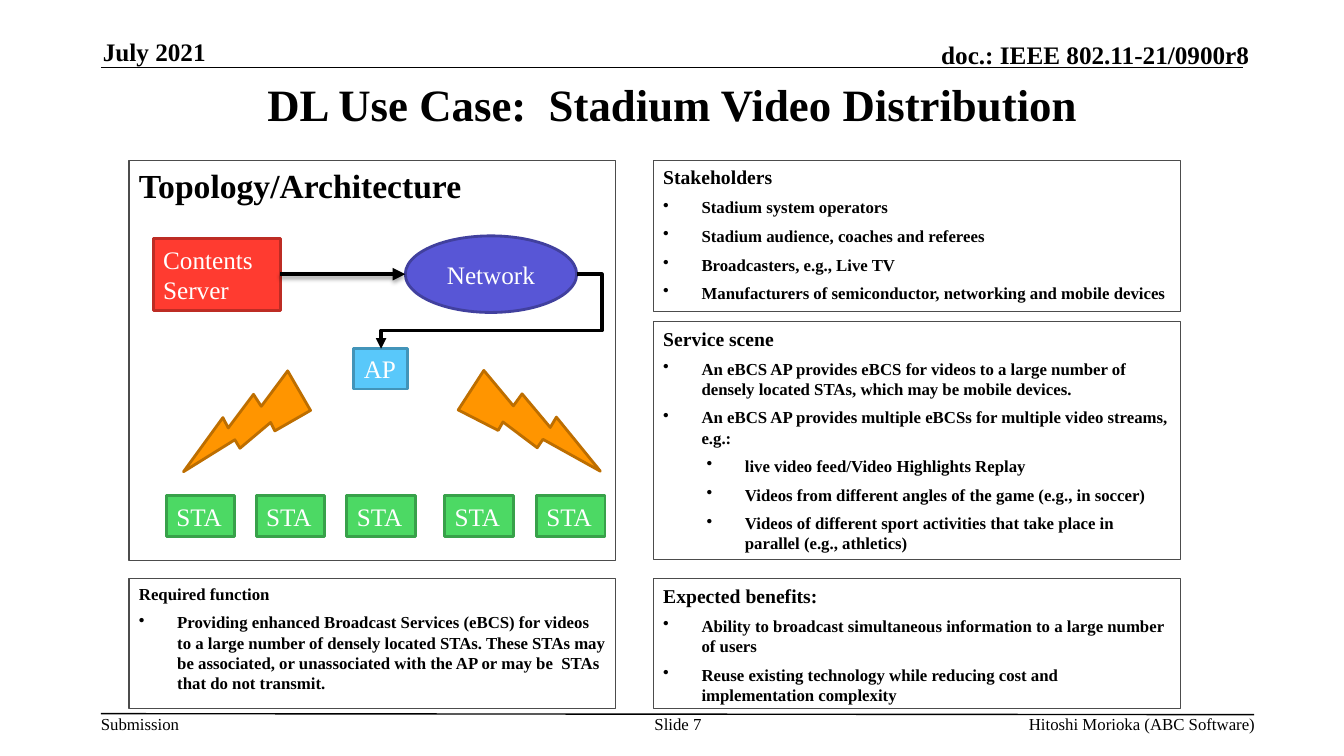
from lxml import etree
from pptx import Presentation
from pptx.dml.color import RGBColor
from pptx.enum.shapes import MSO_CONNECTOR as Connector, MSO_SHAPE as Shape
from pptx.enum.text import MSO_ANCHOR as Anchor, MSO_AUTO_SIZE as AutoSize, PP_ALIGN as Align
from pptx.oxml.ns import qn
from pptx.util import Pt

PX = 9144  # EMU per px, 100 px to the inch
FONT = "Times New Roman"
BLACK = RGBColor(0x00, 0x00, 0x00)
WHITE = RGBColor(0xFF, 0xFF, 0xFF)
PANEL_LINE = RGBColor(0x4C, 0x4C, 0x4C)
RED, DARK_RED = RGBColor(0xFF, 0x3B, 0x30), RGBColor(0xBD, 0x2C, 0x24)
BLUE, DARK_BLUE = RGBColor(0x59, 0xC8, 0xFA), RGBColor(0x42, 0x94, 0xB9)
GREEN, DARK_GREEN = RGBColor(0x4C, 0xD9, 0x64), RGBColor(0x38, 0xA1, 0x4A)
PURPLE, DARK_PURPLE = RGBColor(0x58, 0x56, 0xD6), RGBColor(0x41, 0x40, 0x9E)
ORANGE, DARK_ORANGE = RGBColor(0xFF, 0x95, 0x00), RGBColor(0xBD, 0x6E, 0x00)

TITLE = "DL Use Case:  Stadium Video Distribution"
TITLE_BOX = (242, 75, 850, 56)

# text, box, size, bold, alignment, anchor
MARGIN_TEXTS = [
    ("July 2021", (102, 36, 273, 30), 18, True, Align.LEFT, Anchor.BOTTOM),
    ("doc.: IEEE 802.11-21/0900r8", (729, 39, 510, 30), 18, True, Align.RIGHT, Anchor.BOTTOM),
    ("Submission", (100, 708, 79, 20), 12, False, Align.LEFT, Anchor.TOP),
    ("Slide 7", (634, 708, 77, 40), 12, False, Align.CENTER, Anchor.TOP),
    ("Hitoshi Morioka (ABC Software)", (781, 708, 464, 20), 12, False, Align.RIGHT, Anchor.TOP),
]
RULES = [((100, 67), (1233, 67)), ((100, 708), (1244, 709))]

LEFT_COLUMN, RIGHT_COLUMN = (128, 483), (648, 523)  # left, width
# column, top, height, heading, heading size, bullets as (level, text)
PANELS = [
    (LEFT_COLUMN, 159, 397, "Topology/Architecture", 24, []),
    (RIGHT_COLUMN, 159, 150, "Stakeholders", 14, [
        (1, "Stadium system operators"),
        (1, "Stadium audience, coaches and referees"),
        (1, "Broadcasters, e.g., Live TV"),
        (1, "Manufacturers of semiconductor, networking and mobile devices"),
    ]),
    (RIGHT_COLUMN, 319, 236, "Service scene", 14, [
        (1, "An eBCS AP provides eBCS for videos to a large number of densely located STAs, "
            "which may be mobile devices."),
        (1, "An eBCS AP provides multiple eBCSs for multiple video streams, e.g.:"),
        (2, "live video feed/Video Highlights Replay"),
        (2, "Videos from different angles of the game (e.g., in soccer)"),
        (2, "Videos of different sport activities that take place in parallel (e.g., athletics)"),
    ]),
    (LEFT_COLUMN, 574, 129, "Required function", 12, [
        (1, "Providing enhanced Broadcast Services (eBCS) for videos to a large number of "
            "densely located STAs. These STAs may be associated, or unassociated with the AP "
            "or may be  STAs that do not transmit."),
    ]),
    (RIGHT_COLUMN, 574, 129, "Expected benefits:", 14, [
        (1, "Ability to broadcast simultaneous information to a large number of users"),
        (1, "Reuse existing technology while reducing cost and implementation complexity"),
    ]),
]
HANGING = 38
LEVEL_INDENT = {1: 38, 2: 81}

# lines, box, fill, outline, wraps
STATION_LEFTS = [165, 254, 344, 441, 532]
BOXES = [
    (["Contents", "Server"], (152, 237, 126, 71), RED, DARK_RED, True),
    (["AP"], (351, 346, 53, 40), BLUE, DARK_BLUE, False),
] + [(["STA"], (left, 492, 68, 40), GREEN, DARK_GREEN, False) for left in STATION_LEFTS]
NETWORK = (402, 234, 170, 76)
# box before the quarter turn, mirrored
BOLTS = [((195, 355, 100, 126), False), ((475, 347, 100, 141), True)]
SERVER_TO_NETWORK = ((278, 272), (402, 272))
NETWORK_TO_AP = ((572, 272), (378, 346))
ELBOW_ADJUSTMENTS = {"adj1": -12900, "adj2": 75500}


def scaled(lengths):
    return [length * PX for length in lengths]


def add_run(paragraph, text, size, color=BLACK, bold=False):
    run = paragraph.add_run()
    run.text = text
    run.font.name, run.font.size, run.font.bold = FONT, Pt(size), bold
    run.font.color.rgb = color


def next_paragraph(frame):
    """Return the empty first paragraph, or a new one once that is used."""
    first = frame.paragraphs[0]
    return frame.add_paragraph() if first.runs else first


def add_outlined(slide, kind, box, fill, outline, width):
    shape = slide.shapes.add_shape(kind, *scaled(box))
    shape.shadow.inherit = False
    if fill is None:
        shape.fill.background()
    else:
        shape.fill.solid()
        shape.fill.fore_color.rgb = fill
    shape.line.color.rgb = outline
    shape.line.width = Pt(width)
    return shape


def add_line(slide, start, end, width, kind=Connector.STRAIGHT, arrow=False):
    """Draw a connector and return it with its empty effect list."""
    line = slide.shapes.add_connector(kind, *scaled(start + end))
    line.line.color.rgb = BLACK
    line.line.width = Pt(width)
    properties = line.element.spPr
    if arrow:
        etree.SubElement(properties.find(qn("a:ln")), qn("a:tailEnd"), type="triangle")
    return line, etree.SubElement(properties, qn("a:effectLst"))


def add_margin_text(slide, text, box, size, bold, alignment, anchor):
    frame = slide.shapes.add_textbox(*scaled(box)).text_frame
    frame.word_wrap = True
    frame.vertical_anchor = anchor
    frame.margin_left = frame.margin_right = frame.margin_top = frame.margin_bottom = 0
    frame.paragraphs[0].alignment = alignment
    add_run(frame.paragraphs[0], text, size, bold=bold)


def add_panel_paragraph(frame, text, size, level=0):
    paragraph = next_paragraph(frame)
    paragraph.alignment = Align.LEFT
    paragraph.space_before = Pt(6)
    paragraph.level = level
    properties = paragraph._p.get_or_add_pPr()
    properties.set("marL", str(LEVEL_INDENT.get(level, HANGING) * PX))
    properties.set("indent", str(-HANGING * PX))
    if level:
        color = etree.SubElement(properties, qn("a:buClr"))
        etree.SubElement(color, qn("a:srgbClr"), val=str(BLACK))
        etree.SubElement(properties, qn("a:buChar"), char="•")
    add_run(paragraph, text, size, bold=True)


def add_panel(slide, column, top, height, heading, size, bullets):
    left, width = column
    panel = add_outlined(slide, Shape.RECTANGLE, (left, top, width, height), None, PANEL_LINE, 0.75)
    frame = panel.text_frame
    frame.word_wrap = True
    frame.vertical_anchor = Anchor.TOP
    add_panel_paragraph(frame, heading, size)
    for level, text in bullets:
        add_panel_paragraph(frame, text, 12, level)


def add_box(slide, lines, box, fill, outline, wraps):
    frame = add_outlined(slide, Shape.RECTANGLE, box, fill, outline, 2).text_frame
    frame.word_wrap = wraps
    frame.auto_size = AutoSize.SHAPE_TO_FIT_TEXT
    frame.vertical_anchor = Anchor.TOP
    for line in lines:
        paragraph = next_paragraph(frame)
        paragraph.alignment = Align.LEFT
        add_run(paragraph, line, 18, WHITE)


def add_topology(slide):
    for box in BOXES:
        add_box(slide, *box)
    frame = add_outlined(slide, Shape.OVAL, NETWORK, PURPLE, DARK_PURPLE, 2).text_frame
    frame.vertical_anchor = Anchor.MIDDLE
    frame.paragraphs[0].alignment = Align.CENTER
    add_run(frame.paragraphs[0], "Network", 18, WHITE)

    _, effects = add_line(slide, *SERVER_TO_NETWORK, 3, arrow=True)
    shadow = etree.SubElement(effects, qn("a:outerShdw"), blurRad=str(Pt(3.1)),
                              dist=str(Pt(1.8)), dir="5400000", rotWithShape="0")
    color = etree.SubElement(shadow, qn("a:srgbClr"), val=str(BLACK))
    etree.SubElement(color, qn("a:alpha"), val="35000")

    for box, mirrored in BOLTS:
        bolt = add_outlined(slide, Shape.LIGHTNING_BOLT, box, ORANGE, DARK_ORANGE, 2)
        bolt.rotation = 90
        if mirrored:
            bolt.element.spPr.find(qn("a:xfrm")).set("flipV", "1")

    elbow, _ = add_line(slide, *NETWORK_TO_AP, 2.5, Connector.ELBOW, arrow=True)
    geometry = elbow.element.spPr.find(qn("a:prstGeom"))
    geometry.set("prst", "bentConnector4")
    for name, value in ELBOW_ADJUSTMENTS.items():
        etree.SubElement(geometry.find(qn("a:avLst")), qn("a:gd"), name=name, fmla=f"val {value}")


def main():
    presentation = Presentation()
    presentation.slide_width, presentation.slide_height = scaled((1333, 750))
    slide = presentation.slides.add_slide(presentation.slide_layouts[5])
    title = slide.shapes.title
    title.left, title.top, title.width, title.height = scaled(TITLE_BOX)
    title.text_frame.auto_size = AutoSize.NONE
    title.text_frame.vertical_anchor = Anchor.MIDDLE
    title.text_frame.paragraphs[0].alignment = Align.CENTER
    add_run(title.text_frame.paragraphs[0], TITLE, 32, bold=True)
    for start, end in RULES:
        add_line(slide, start, end, 1)
    for margin_text in MARGIN_TEXTS:
        add_margin_text(slide, *margin_text)
    for panel in PANELS:
        add_panel(slide, *panel)
    add_topology(slide)
    presentation.save("out.pptx")


if __name__ == "__main__":
    main()
